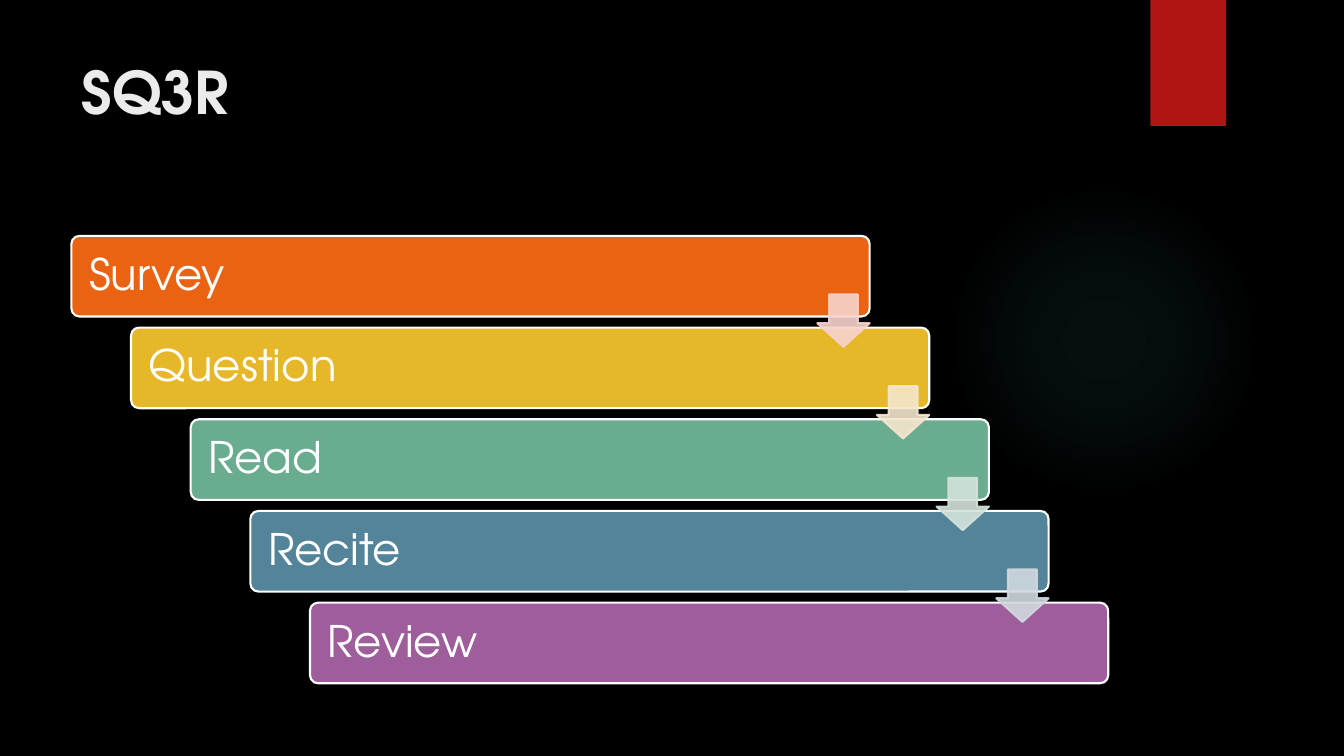
import pptx
import pptx.util
import pptx.dml.color
import pptx.enum.shapes
import pptx.enum.text
import pptx.oxml
import pptx.oxml.ns
import lxml.etree

Pt = pptx.util.Pt
RGBColor = pptx.dml.color.RGBColor
Kind = pptx.enum.shapes.MSO_SHAPE
Anchor = pptx.enum.text.MSO_ANCHOR
Align = pptx.enum.text.PP_ALIGN
qn = pptx.oxml.ns.qn

FONT = "TeX Gyre Adventor"
BLACK = RGBColor(0x00, 0x00, 0x00)
WHITE = RGBColor(0xFF, 0xFF, 0xFF)
PALE = RGBColor(0xEB, 0xEB, 0xEB)
RED = RGBColor(0xB0, 0x15, 0x13)
TEAL = RGBColor(0x50, 0xB9, 0xC1)

STEPS = [
    ("Survey", RGBColor(0xEA, 0x63, 0x12)),
    ("Question", RGBColor(0xE6, 0xB7, 0x29)),
    ("Read", RGBColor(0x6A, 0xAC, 0x90)),
    ("Recite", RGBColor(0x54, 0x84, 0x9A)),
    ("Review", RGBColor(0x9E, 0x5E, 0x9B)),
]
ARROWS = [
    RGBColor(0xF7, 0xD3, 0xCC),
    RGBColor(0xF5, 0xE6, 0xCD),
    RGBColor(0xD4, 0xE3, 0xDB),
    RGBColor(0xD1, 0xD9, 0xDE),
]
LEFT, TOP = 51, 168.5
WIDE, HIGH = 570.2, 57.6
SHIFT, DROP = 42.6, 65.5
SIZE = 37.4

deck = pptx.Presentation()
deck.slide_width, deck.slide_height = Pt(960), Pt(540)
slide = deck.slides.add_slide(deck.slide_layouts[5])
slide.background.fill.solid()
slide.background.fill.fore_color.rgb = BLACK


def block(kind, left, top, width, height, fill, line=None):
    shape = slide.shapes.add_shape(kind, Pt(left), Pt(top), Pt(width), Pt(height))
    shape.shadow.inherit = False
    shape.fill.solid()
    shape.fill.fore_color.rgb = fill
    if line is None:
        shape.line.fill.background()
    else:
        shape.line.color.rgb = line
        shape.line.width = Pt(1.5)
    return shape


glow = block(Kind.OVAL, 677.5, 131.8, 221.8, 221.8, TEAL)
stops = "".join(
    f'<a:gs pos="{pos}000"><a:srgbClr val="{TEAL}"><a:alpha val="{alpha}000"/></a:srgbClr></a:gs>'
    for pos, alpha in [(0, 7), (36, 6), (69, 0), (100, 0)]
)
blend = pptx.oxml.parse_xml(
    f'<a:gradFill {pptx.oxml.ns.nsdecls("a")}><a:gsLst>{stops}</a:gsLst><a:path path="circle">'
    '<a:fillToRect l="50000" t="50000" r="50000" b="50000"/></a:path></a:gradFill>'
)
solid = glow.element.spPr.find(qn("a:solidFill"))
glow.element.spPr.replace(solid, blend)

block(Kind.RECTANGLE, 821.8, 0, 54, 90, RED)

title = slide.shapes.title
title.left, title.top, title.width, title.height = Pt(51), Pt(36), Pt(792), Pt(110)
frame = title.text_frame
frame.text = "SQ3R"
frame.word_wrap = True
frame.auto_size = pptx.enum.text.MSO_AUTO_SIZE.NONE
frame.vertical_anchor = Anchor.TOP
frame.paragraphs[0].alignment = Align.LEFT
font = frame.paragraphs[0].runs[0].font
font.name, font.size, font.bold = FONT, Pt(42), True
font.color.rgb = PALE

for i, (name, color) in enumerate(STEPS):
    bar = block(Kind.ROUNDED_RECTANGLE, LEFT + i * SHIFT, TOP + i * DROP, WIDE, HIGH, color, WHITE)
    bar.adjustments[0] = 0.1
    frame = bar.text_frame
    frame.text = name
    frame.word_wrap = True
    frame.vertical_anchor = Anchor.MIDDLE
    frame.margin_left = frame.margin_right = Pt(11)
    line = frame.paragraphs[0]
    line.alignment = Align.LEFT
    line.line_spacing = 0.9
    font = line.runs[0].font
    font.name, font.size = FONT, Pt(31)
    font.color.rgb = WHITE

for i, color in enumerate(ARROWS):
    left = LEFT + i * SHIFT + WIDE - SIZE
    arrow = block(Kind.DOWN_ARROW, left, TOP + i * DROP + 41.8, SIZE, SIZE, color, color)
    arrow.adjustments[0] = 0.55
    arrow.adjustments[1] = 0.45
    for tint in arrow.element.spPr.iter(qn("a:srgbClr")):
        lxml.etree.SubElement(tint, qn("a:alpha")).set("val", "90000")

deck.save("out.pptx")
